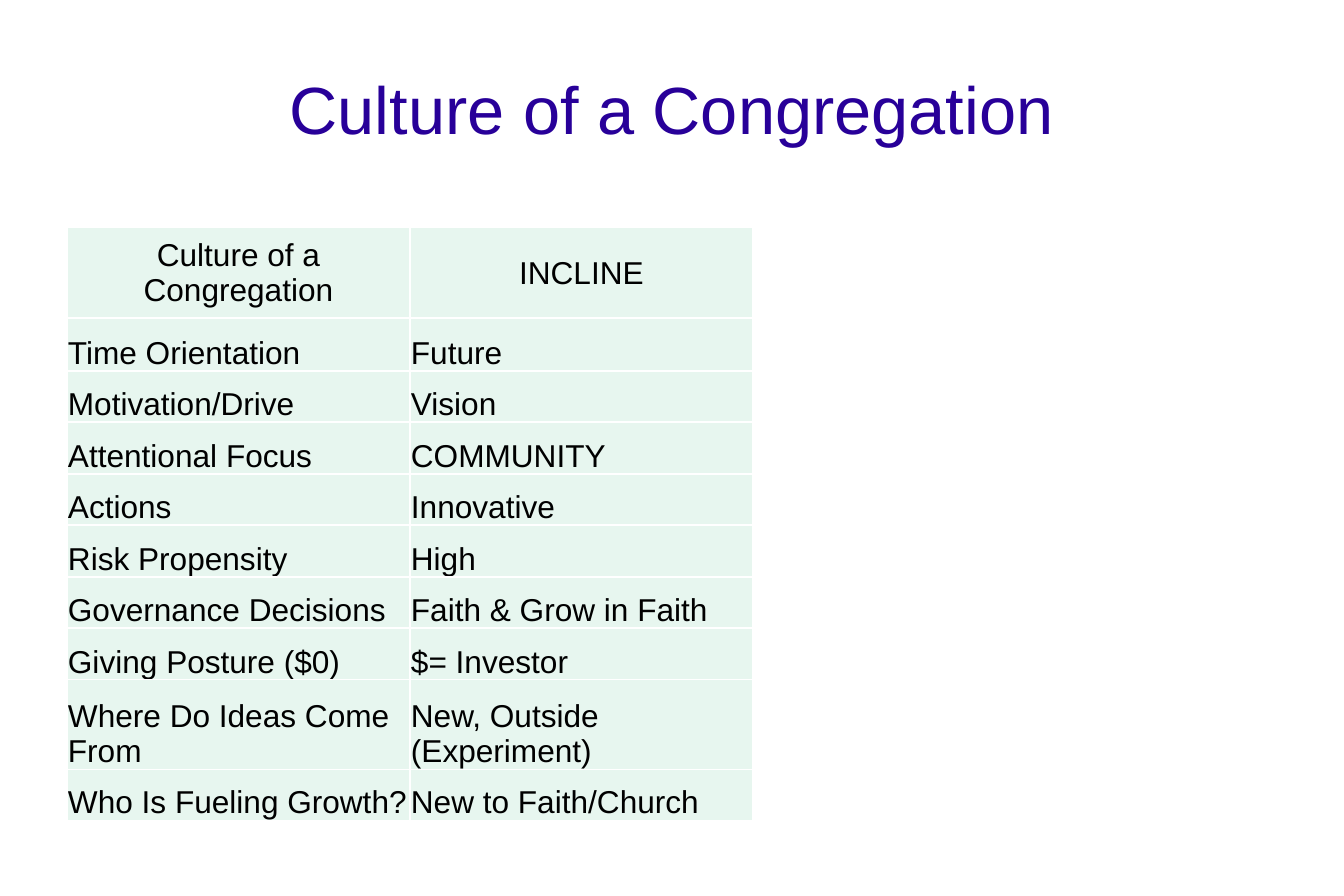
from dataclasses import dataclass

from lxml import etree
from pptx import Presentation
from pptx.dml.color import RGBColor
from pptx.enum.text import MSO_ANCHOR, PP_ALIGN
from pptx.oxml.ns import qn
from pptx.util import Pt

EMU_PER_PX = 914400 / 126.4
BLANK_LAYOUT = 6
MIDDLE, BOTTOM = MSO_ANCHOR.MIDDLE, MSO_ANCHOR.BOTTOM
CENTER, LEFT = PP_ALIGN.CENTER, PP_ALIGN.LEFT


@dataclass(frozen=True)
class Theme:
    font: str = "Arial"
    title_color: str = "280099"
    text_color: str = "000000"
    cell_fill: str = "E7F6EF"
    border_color: str = "FFFFFF"
    title_size: int = 38
    cell_size: int = 18
    border_width: int = 1


THEME = Theme()

TITLE = "Culture of a Congregation"
CULTURE_ROWS = [
    ("Culture of a Congregation", "INCLINE"),
    ("Time Orientation", "Future"),
    ("Motivation/Drive", "Vision"),
    ("Attentional Focus", "COMMUNITY"),
    ("Actions", "Innovative"),
    ("Risk Propensity", "High"),
    ("Governance Decisions", "Faith & Grow in Faith"),
    ("Giving Posture ($0)", "$= Investor"),
    ("Where Do Ideas Come From", "New, Outside (Experiment)"),
    ("Who Is Fueling Growth?", "New to Faith/Church"),
]
ROW_HEIGHTS = [91, 53, 51, 52, 51, 52, 51, 52, 90, 51]
COLUMN_WIDTH = 343


def px(length):
    return round(length * EMU_PER_PX)


def set_margins(target, left, top, right, bottom):
    """Set the inner margins of a text frame or a table cell."""
    target.margin_left, target.margin_top = px(left), px(top)
    target.margin_right, target.margin_bottom = px(right), px(bottom)


def write_text(paragraph, text, size, color, alignment):
    paragraph.alignment = alignment
    run = paragraph.add_run()
    run.text = text
    run.font.name = THEME.font
    run.font.size = Pt(size)
    run.font.color.rgb = RGBColor.from_string(color)


def add_title(slide, text):
    box = slide.shapes.add_textbox(px(67), px(35), px(1210), px(149))
    frame = box.text_frame
    frame.word_wrap = True
    frame.vertical_anchor = MIDDLE
    set_margins(frame, 0, 5, 0, 0)
    paragraph = frame.paragraphs[0]
    paragraph.line_spacing = 0.93
    write_text(paragraph, text, THEME.title_size, THEME.title_color, CENTER)


def add_borders(cell):
    """Line all four sides; must run before the cell gets its fill."""
    properties = cell._tc.get_or_add_tcPr()
    for side in ("a:lnL", "a:lnR", "a:lnT", "a:lnB"):
        line = etree.SubElement(properties, qn(side), w=str(Pt(THEME.border_width)))
        fill = etree.SubElement(line, qn("a:solidFill"))
        etree.SubElement(fill, qn("a:srgbClr"), val=THEME.border_color)


def fill_cell(cell, text, is_header):
    add_borders(cell)
    cell.fill.solid()
    cell.fill.fore_color.rgb = RGBColor.from_string(THEME.cell_fill)
    set_margins(cell, 1, 1, 1, 0)
    cell.vertical_anchor = MIDDLE if is_header else BOTTOM
    write_text(cell.text_frame.paragraphs[0], text, THEME.cell_size,
               THEME.text_color, CENTER if is_header else LEFT)


def add_culture_table(slide, rows):
    column_count = len(rows[0])
    frame = slide.shapes.add_table(
        len(rows), column_count, px(67), px(227),
        px(COLUMN_WIDTH * column_count), px(sum(ROW_HEIGHTS)))
    table = frame.table
    table.first_row = False
    table.horz_banding = False
    for column in table.columns:
        column.width = px(COLUMN_WIDTH)
    for row_index, (texts, height) in enumerate(zip(rows, ROW_HEIGHTS)):
        table.rows[row_index].height = px(height)
        for column_index, text in enumerate(texts):
            fill_cell(table.cell(row_index, column_index), text, row_index == 0)


def main():
    presentation = Presentation()
    presentation.slide_width = px(1344)
    presentation.slide_height = px(896)
    slide = presentation.slides.add_slide(presentation.slide_layouts[BLANK_LAYOUT])
    add_title(slide, TITLE)
    add_culture_table(slide, CULTURE_ROWS)
    presentation.save("out.pptx")


if __name__ == "__main__":
    main()
